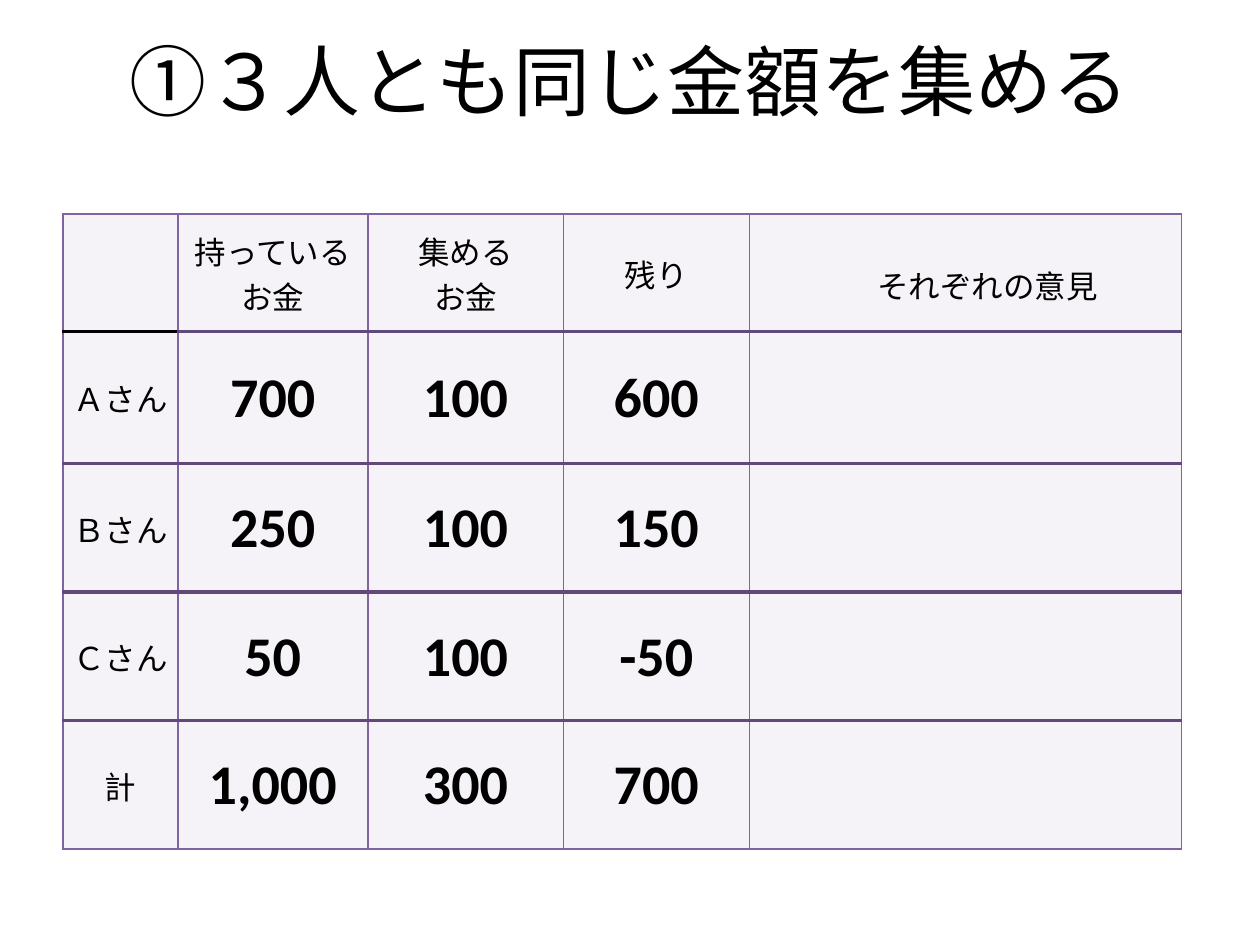
from lxml import etree
from pptx import Presentation
from pptx.dml.color import RGBColor
from pptx.enum.text import MSO_ANCHOR, PP_ALIGN
from pptx.oxml.ns import qn
from pptx.util import Pt

CENTER, LEFT = PP_ALIGN.CENTER, PP_ALIGN.LEFT
MIDDLE = MSO_ANCHOR.MIDDLE
BLACK = RGBColor(0x00, 0x00, 0x00)
PURPLE = RGBColor(0x80, 0x64, 0xA2)
DARK_PURPLE = RGBColor(0x60, 0x4A, 0x7B)
PALE = RGBColor(0xF5, 0xF3, 0xF7)
JAPANESE, DIGITS = "Noto Sans CJK JP", "Calibri"
THIN, THICK = 1, 2.25

COLUMNS = [65.6, 108.6, 111.7, 106.3, 247.1]
ROWS = [67, 75.6, 73.4, 73.4, 73.4]
MONEY = [
    ["", "持っている\nお金", "集める\nお金", "残り", "それぞれの意見"],
    ["Ａさん", "700", "100", "600", ""],
    ["Ｂさん", "250", "100", "150", ""],
    ["Ｃさん", "50", "100", "-50", ""],
    ["計", "1,000", "300", "700", ""],
]


class Deck:
    def __init__(self):
        self.prs = Presentation()
        self.prs.slide_width, self.prs.slide_height = Pt(720), Pt(540)
        self.s = self.prs.slides.add_slide(self.prs.slide_layouts[5])

    def add_text(self, tf, text, size, font=JAPANESE, bold=False):
        for i, line in enumerate(text.split("\n")):
            p = tf.add_paragraph() if i else tf.paragraphs[0]
            p.alignment = CENTER
            r = p.add_run()
            r.text = line
            r.font.name, r.font.size, r.font.bold = font, Pt(size), bold
            r.font.color.rgb = BLACK
            ea = etree.SubElement(r._r.get_or_add_rPr(), qn("a:ea"))
            ea.set("typeface", JAPANESE)

    def title(self, text, x, y, w, h):
        sp = self.s.shapes.title
        sp.left, sp.top, sp.width, sp.height = Pt(x), Pt(y), Pt(w), Pt(h)
        sp.text_frame.vertical_anchor = MIDDLE
        self.add_text(sp.text_frame, text, 44)

    def borders(self, cell, edges):
        """Draw left, right, top and bottom edges, each a (colour, width) pair."""
        tcPr = cell._tc.get_or_add_tcPr()
        for i, (side, (color, width)) in enumerate(zip("LRTB", edges)):
            ln = etree.Element(qn(f"a:ln{side}"), w=str(Pt(width)))
            fill = etree.SubElement(ln, qn("a:solidFill"))
            etree.SubElement(fill, qn("a:srgbClr"), val=str(color))
            tcPr.insert(i, ln)

    def table(self, data, x, y, columns, rows):
        frame = self.s.shapes.add_table(len(rows), len(columns), Pt(x), Pt(y),
                                        Pt(sum(columns)), Pt(sum(rows)))
        tbl = frame.table
        tbl.first_row = tbl.horz_banding = False
        for column, width in zip(tbl.columns, columns):
            column.width = Pt(width)
        for row, height in zip(tbl.rows, rows):
            row.height = Pt(height)

        outer, inner = (PURPLE, THIN), (DARK_PURPLE, THICK)
        lines = [outer] + [inner] * (len(rows) - 1) + [outer]
        for i, values in enumerate(data):
            for j, text in enumerate(values):
                cell = tbl.cell(i, j)
                cell.fill.solid()
                cell.fill.fore_color.rgb = PALE
                top, bottom = lines[i], lines[i + 1]
                if j == 0 and i == 0:
                    bottom = (BLACK, THICK)
                elif j == 0 and i == 1:
                    top = (BLACK, THICK)
                self.borders(cell, [outer, outer, top, bottom])
                if text:
                    self.cell_text(cell, text, i > 0 and j > 0)
        return tbl

    def cell_text(self, cell, text, is_amount):
        cell.vertical_anchor = MIDDLE
        cell.margin_left = cell.margin_right = cell.margin_top = Pt(0.7)
        cell.margin_bottom = Pt(0)
        if is_amount:
            self.add_text(cell.text_frame, text, 32, DIGITS, True)
        else:
            self.add_text(cell.text_frame, text, 18)


def main():
    deck = Deck()
    tbl = deck.table(MONEY, 36, 122.4, COLUMNS, ROWS)
    opinions = tbl.cell(0, len(COLUMNS) - 1)
    opinions.margin_left, opinions.margin_top = Pt(73), Pt(14)
    opinions.text_frame.paragraphs[0].alignment = LEFT
    deck.title("①３人とも同じ金額を集める", 0, 0, 720, 91.4)
    deck.prs.save("out.pptx")


if __name__ == "__main__":
    main()
